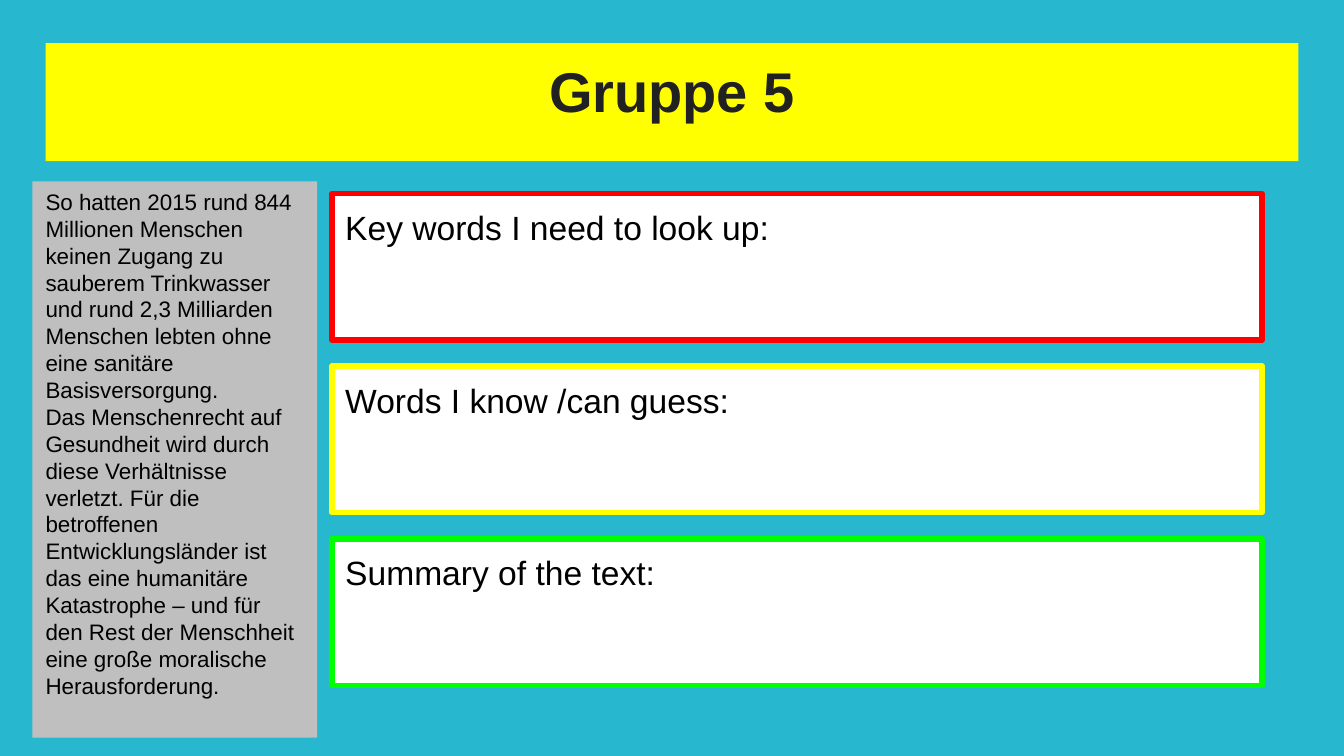
from dataclasses import dataclass
from typing import Optional

from pptx import Presentation
from pptx.dml.color import RGBColor
from pptx.enum.shapes import MSO_SHAPE as Preset
from pptx.enum.text import MSO_ANCHOR as Anchor, PP_ALIGN as Align
from pptx.util import Inches, Pt


@dataclass
class Panel:
    left: float
    top: float
    width: float
    height: float
    fill: str
    paragraphs: list[str]
    size: int
    line: Optional[str] = None
    color: str = "000000"
    bold: bool = False
    align: Align = Align.LEFT
    inset: float = 0.1


def paint(color_format, color: str) -> None:
    color_format.rgb = RGBColor.from_string(color)


def apply_format(target, values: dict) -> None:
    for name, value in values.items():
        setattr(target, name, value)


def format_panel(shape, panel: Panel) -> None:
    apply_format(shape, {
        "left": Inches(panel.left), "top": Inches(panel.top),
        "width": Inches(panel.width), "height": Inches(panel.height),
    })
    shape.fill.solid()
    paint(shape.fill.fore_color, panel.fill)
    if panel.line:
        paint(shape.line.color, panel.line)
        shape.line.width = Pt(3)
    else:
        shape.line.fill.background()

    frame = shape.text_frame
    apply_format(frame, {
        "word_wrap": True, "vertical_anchor": Anchor.TOP,
        "margin_left": Inches(0.1), "margin_right": Inches(0.1),
        "margin_top": Inches(panel.inset), "margin_bottom": Inches(panel.inset),
    })
    frame.text = "\n".join(panel.paragraphs)
    for paragraph in frame.paragraphs:
        apply_format(paragraph, {
            "alignment": panel.align, "line_spacing": 1.0,
            "space_before": Pt(0), "space_after": Pt(0),
        })
        for run in paragraph.runs:
            apply_format(run.font, {
                "name": "Arial", "size": Pt(panel.size), "bold": panel.bold,
            })
            paint(run.font.color, panel.color)


def add_panel(slide, panel: Panel) -> None:
    shape = slide.shapes.add_shape(Preset.RECTANGLE, 0, 0, 0, 0)
    shape.shadow.inherit = False
    format_panel(shape, panel)


SLIDE_WIDTH = 10
SLIDE_HEIGHT = SLIDE_WIDTH * 9 / 16
TITLE = Panel(0.34, 0.32, 9.32, 0.88, "FFFF00", ["Gruppe 5"], 30,
              color="212121", bold=True, align=Align.CENTER)
READING_TEXT = Panel(0.24, 1.35, 2.12, 4.14, "BFBFBF", [
    "So hatten 2015 rund 844 Millionen Menschen keinen Zugang zu sauberem "
    "Trinkwasser und rund 2,3 Milliarden Menschen lebten ohne eine sanitäre "
    "Basisversorgung.",
    "Das Menschenrecht auf Gesundheit wird durch diese Verhältnisse verletzt. "
    "Für die betroffenen Entwicklungsländer ist das eine humanitäre "
    "Katastrophe – und für den Rest der Menschheit eine große moralische "
    "Herausforderung.",
], 12, inset=0.05)
TASKS = [
    ("Key words I need to look up:", "FF0000"),
    ("Words I know /can guess:", "FFFF00"),
    ("Summary of the text:", "00FF00"),
]
FIRST_TASK_TOP = 1.44
LAST_TASK_TOP = 4.01
TASK_PITCH = (LAST_TASK_TOP - FIRST_TASK_TOP) / (len(TASKS) - 1)


def main() -> None:
    presentation = Presentation()
    apply_format(presentation, {
        "slide_width": Inches(SLIDE_WIDTH), "slide_height": Inches(SLIDE_HEIGHT),
    })
    slide = presentation.slides.add_slide(presentation.slide_layouts[5])
    slide.background.fill.solid()
    paint(slide.background.fill.fore_color, "27B8CF")

    format_panel(slide.shapes.title, TITLE)
    for index, (prompt, outline) in enumerate(TASKS):
        top = FIRST_TASK_TOP + index * TASK_PITCH
        add_panel(slide, Panel(2.47, top, 6.92, 1.09, "FFFFFF", [prompt], 18,
                               line=outline))
    add_panel(slide, READING_TEXT)
    presentation.save("out.pptx")


if __name__ == "__main__":
    main()
